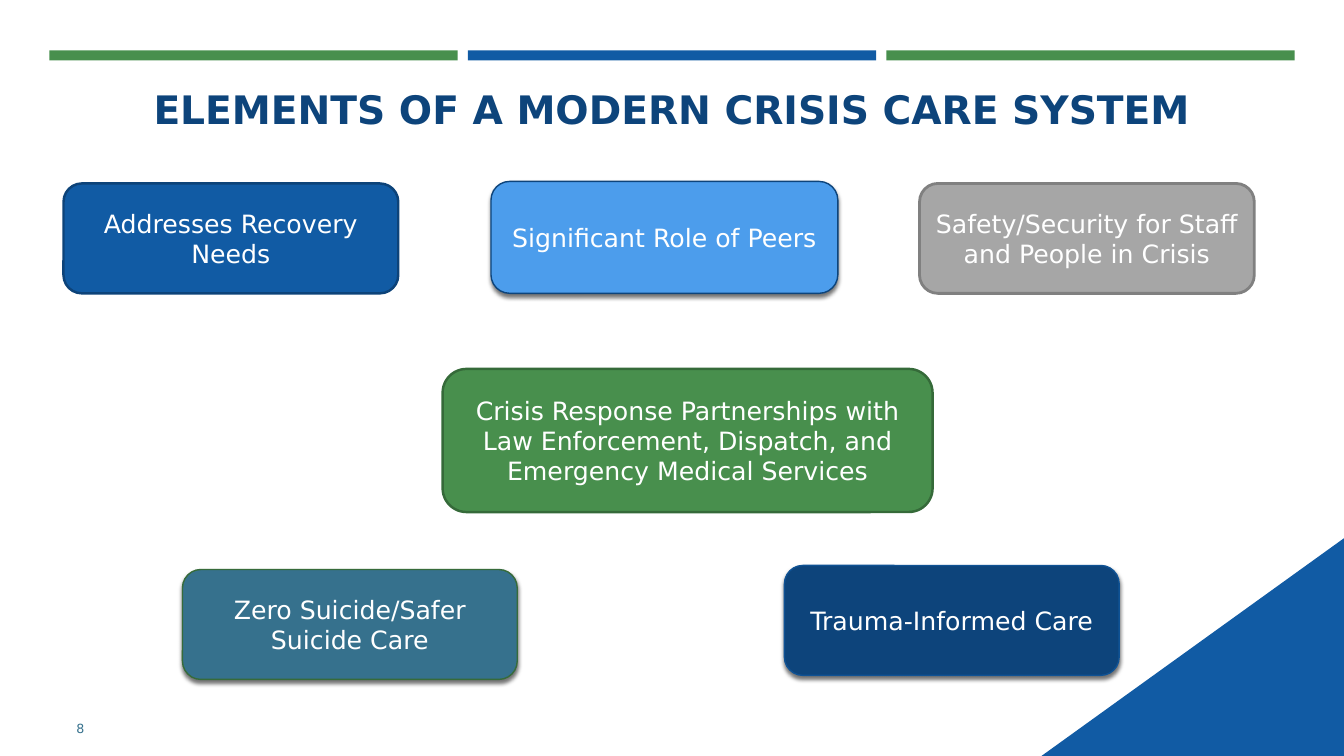
from lxml import etree
from pptx import Presentation
from pptx.dml.color import RGBColor
from pptx.enum.shapes import MSO_SHAPE
from pptx.enum.text import MSO_ANCHOR, PP_ALIGN
from pptx.oxml.ns import qn
from pptx.util import Emu, Pt

RECTANGLE = MSO_SHAPE.RECTANGLE
ROUNDED = MSO_SHAPE.ROUNDED_RECTANGLE
TOP, MIDDLE = MSO_ANCHOR.TOP, MSO_ANCHOR.MIDDLE
LEFT, CENTER = PP_ALIGN.LEFT, PP_ALIGN.CENTER

WHITE = RGBColor(0xFF, 0xFF, 0xFF)
BLUE = RGBColor(0x11, 0x5B, 0xA4)
BLUE_EDGE = RGBColor(0x0D, 0x43, 0x79)
NAVY = RGBColor(0x0D, 0x44, 0x7B)
NAVY_EDGE = RGBColor(0x0F, 0x52, 0x94)
SKY = RGBColor(0x4C, 0x9D, 0xEC)
TEAL = RGBColor(0x36, 0x71, 0x8D)
TEAL_EDGE = RGBColor(0x36, 0x6B, 0x3A)
GREEN = RGBColor(0x48, 0x8F, 0x4D)
GREEN_EDGE = RGBColor(0x35, 0x6A, 0x39)
GRAY = RGBColor(0xA6, 0xA6, 0xA6)
GRAY_EDGE = RGBColor(0x80, 0x80, 0x80)

PX = 9144  # 100 px to the inch
WIDTH, HEIGHT = 1333, 750


def px(*lengths):
    return [Emu(length * PX) for length in lengths]


class SlideBuilder:
    font_name = "DejaVu Sans"

    def __init__(self, presentation):
        self.slide = presentation.slides.add_slide(presentation.slide_layouts[5])
        self.shapes = self.slide.shapes

    def set_text(self, shape, text, size, color, align=CENTER, anchor=MIDDLE, bold=False):
        frame = shape.text_frame
        frame.word_wrap = True
        frame.vertical_anchor = anchor
        frame.text = text
        paragraph = frame.paragraphs[0]
        paragraph.alignment = align
        font = paragraph.font
        font.name, font.size, font.bold = self.font_name, Pt(size), bold
        font.color.rgb = color

    def paint(self, shape, fill):
        shape.shadow.inherit = False
        shape.fill.solid()
        shape.fill.fore_color.rgb = fill
        shape.line.fill.background()

    def title(self, text, box):
        title = self.shapes.title
        title.left, title.top, title.width, title.height = px(*box)
        self.set_text(title, text, 28, NAVY, anchor=TOP, bold=True)

    def label(self, text, box):
        self.set_text(self.shapes.add_textbox(*px(*box)), text, 9, TEAL, LEFT)

    def bar(self, box, fill):
        self.paint(self.shapes.add_shape(RECTANGLE, *px(*box)), fill)

    def polygon(self, points, fill):
        builder = self.shapes.build_freeform(*points[0], scale=PX)
        builder.add_line_segments(points[1:], close=True)
        self.paint(builder.convert_to_shape(), fill)

    def card(self, text, box, fill, edge, edge_width, shadow=False):
        shape = self.shapes.add_shape(ROUNDED, *px(*box))
        self.paint(shape, fill)
        shape.line.color.rgb = edge
        shape.line.width = Pt(edge_width)
        if shadow:
            self.drop_shadow(shape)
        self.set_text(shape, text, 18, WHITE)

    def drop_shadow(self, shape):
        effects = shape._element.spPr.find(qn("a:effectLst"))
        outer = etree.SubElement(effects, qn("a:outerShdw"), blurRad=str(Pt(3)),
                                 dist=str(Pt(2)), dir="5400000", rotWithShape="0")
        color = etree.SubElement(outer, qn("a:srgbClr"), val="000000")
        etree.SubElement(color, qn("a:alpha"), val="55000")


def main():
    presentation = Presentation()
    presentation.slide_width, presentation.slide_height = px(WIDTH, HEIGHT)
    builder = SlideBuilder(presentation)

    # Top bars and corner triangle
    for column, color in enumerate((GREEN, BLUE, GREEN)):
        builder.bar((49 + 415 * column, 50, 405, 10), color)
    builder.polygon([(1033, HEIGHT), (WIDTH, 534), (WIDTH, HEIGHT)], BLUE)

    # Title and slide number
    builder.title("ELEMENTS OF A MODERN CRISIS CARE SYSTEM", (63, 80, 1206, 108))
    builder.label("8", (66, 703, 115, 40))

    # Cards: text, box, fill, edge, edge width, shadow
    cards = [
        ("Addresses Recovery Needs", (63, 182, 332, 109), BLUE, BLUE_EDGE, 1.75, False),
        ("Significant Role of Peers", (487, 180, 344, 111), SKY, NAVY, 1, True),
        ("Safety/Security for Staff and People in Crisis", (912, 182, 332, 109),
         GRAY, GRAY_EDGE, 2, False),
        ("Crisis Response Partnerships with Law Enforcement, Dispatch, "
         "and Emergency Medical Services", (439, 366, 486, 142),
         GREEN, GREEN_EDGE, 1.75, False),
        ("Zero Suicide/Safer Suicide Care", (181, 565, 332, 109), TEAL, TEAL_EDGE, 1, True),
        ("Trauma-Informed Care", (778, 561, 332, 109), NAVY, NAVY_EDGE, 1, True),
    ]
    for card in cards:
        builder.card(*card)

    presentation.save("out.pptx")


if __name__ == "__main__":
    main()
